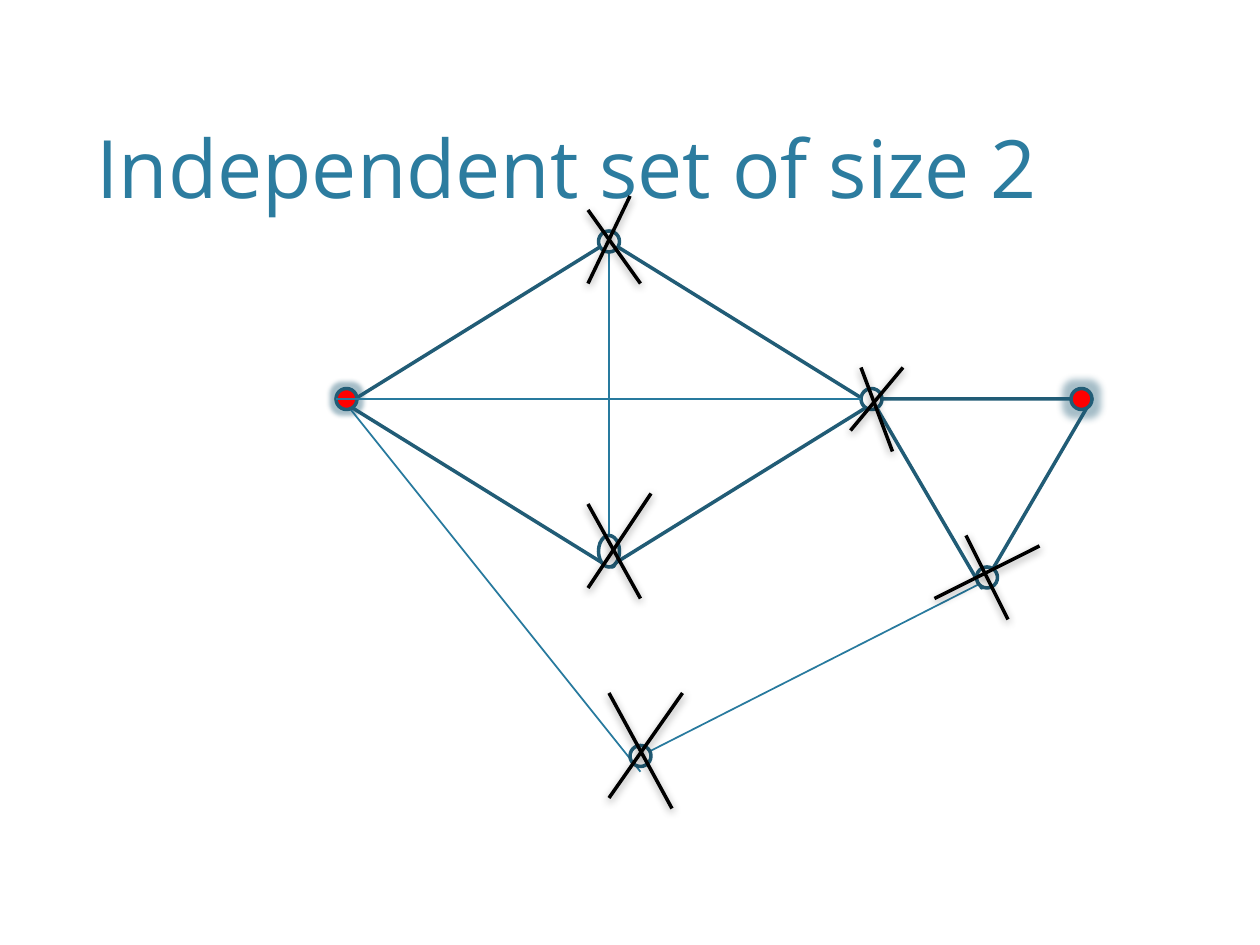
from lxml import etree
from pptx import Presentation
from pptx.dml.color import RGBColor
from pptx.enum.shapes import MSO_CONNECTOR, MSO_SHAPE
from pptx.enum.text import MSO_ANCHOR, PP_ALIGN
from pptx.oxml import parse_xml
from pptx.util import Pt

NS = "http://schemas.openxmlformats.org/drawingml/2006/main"
DARK, EDGE, TITLE = "215C76", "287A9E", "2C7C9F"
WHITE, RED, BLACK = "FFFFFF", "FF0000", "000000"
GLOW = '<a:glow rad="{}"><a:srgbClr val="215C76"><a:alpha val="40000"/></a:srgbClr></a:glow>'
SHADOW = ('<a:outerShdw blurRad="{}" dist="{}" dir="5400000" rotWithShape="0">'
          '<a:srgbClr val="000000"><a:alpha val="38000"/></a:srgbClr></a:outerShdw>'
          ).format(Pt(5), Pt(1.6))


def rgb(value):
    return RGBColor.from_string(value)


def style(sp, color, width, effect=""):
    """Set the outline and replace the theme effects with the given effect XML."""
    sp.line.color.rgb = rgb(color)
    sp.line.width = Pt(width)
    pr = sp._element.spPr
    for old in pr.findall(etree.QName(NS, "effectLst").text):
        pr.remove(old)
    pr.append(parse_xml(f'<a:effectLst xmlns:a="{NS}">{effect}</a:effectLst>'))


prs = Presentation()
prs.slide_width, prs.slide_height = Pt(720), Pt(540)
s = prs.slides.add_slide(prs.slide_layouts[6])

# Title
tb = s.shapes.add_textbox(Pt(0), Pt(7), Pt(648), Pt(119))
tf = tb.text_frame
tf.word_wrap = True
tf.vertical_anchor = MSO_ANCHOR.BOTTOM
p = tf.paragraphs[0]
p.alignment = PP_ALIGN.CENTER
r = p.add_run()
r.text = "Independent set of size 2"
for name, value in {"name": "Open Sans", "size": Pt(46)}.items():
    setattr(r.font, name, value)
r.font.color.rgb = rgb(TITLE)

# Outlines, then nodes: preset, left, top, width, height, fill, glow radius
outlines = [
    (MSO_SHAPE.DIAMOND, 198, 138, 300, 186, WHITE, 0),
    (MSO_SHAPE.FLOWCHART_MERGE, 498, 228, 126, 108, WHITE, 0),
]
nodes = [
    (MSO_SHAPE.OVAL, 360, 426, 12, 12, WHITE, 0),
    (MSO_SHAPE.OVAL, 342, 132, 12, 12, WHITE, 0),
    (MSO_SHAPE.OVAL, 492, 222, 12, 12, WHITE, 0),
    (MSO_SHAPE.OVAL, 612, 222, 12, 12, RED, 8),
    (MSO_SHAPE.OVAL, 558, 324, 12, 12, WHITE, 0),
    (MSO_SHAPE.OVAL, 348, 318, 3.6, 6, TITLE, 0),
    (MSO_SHAPE.OVAL, 342, 306, 12, 18, WHITE, 0),
    (MSO_SHAPE.FLOWCHART_CONNECTOR, 192, 222, 12, 12, RED, 5),
]
# Lines: x and y of the start, x and y of the end
edges = [(348, 138, 348, 324), (198, 231, 366, 441), (567, 330, 366, 432)]
diagonal = [(492, 228, 192, 228)]
crosses = [
    (336, 120, 366, 162), (360, 112, 336, 162),
    (336, 288, 366, 342), (372, 282, 336, 336),
    (348, 396, 384, 462), (390, 396, 348, 456),
    (492, 210, 510, 258), (516, 210, 486, 246),
    (552, 306, 576, 354), (594, 312, 534, 342),
]

layers = [
    (outlines, None), (edges, (EDGE, 1)), (nodes, None),
    (diagonal, (EDGE, 1)), (crosses, (BLACK, 2, SHADOW)),
]
drawn = {}
for items, look in layers:
    for item in items:
        if look:
            sp = s.shapes.add_connector(MSO_CONNECTOR.STRAIGHT, *map(Pt, item))
            style(sp, *look)
        else:
            preset, *box, fill, glow = item
            sp = s.shapes.add_shape(preset, *map(Pt, box))
            sp.fill.solid()
            sp.fill.fore_color.rgb = rgb(fill)
            style(sp, DARK, 2, GLOW.format(Pt(glow)) if glow else "")
        drawn[item] = sp

diamond = drawn[outlines[0]]
drawn[edges[0]].begin_connect(diamond, 0)
drawn[edges[0]].end_connect(diamond, 2)
drawn[edges[1]].begin_connect(diamond, 1)

prs.save("out.pptx")
